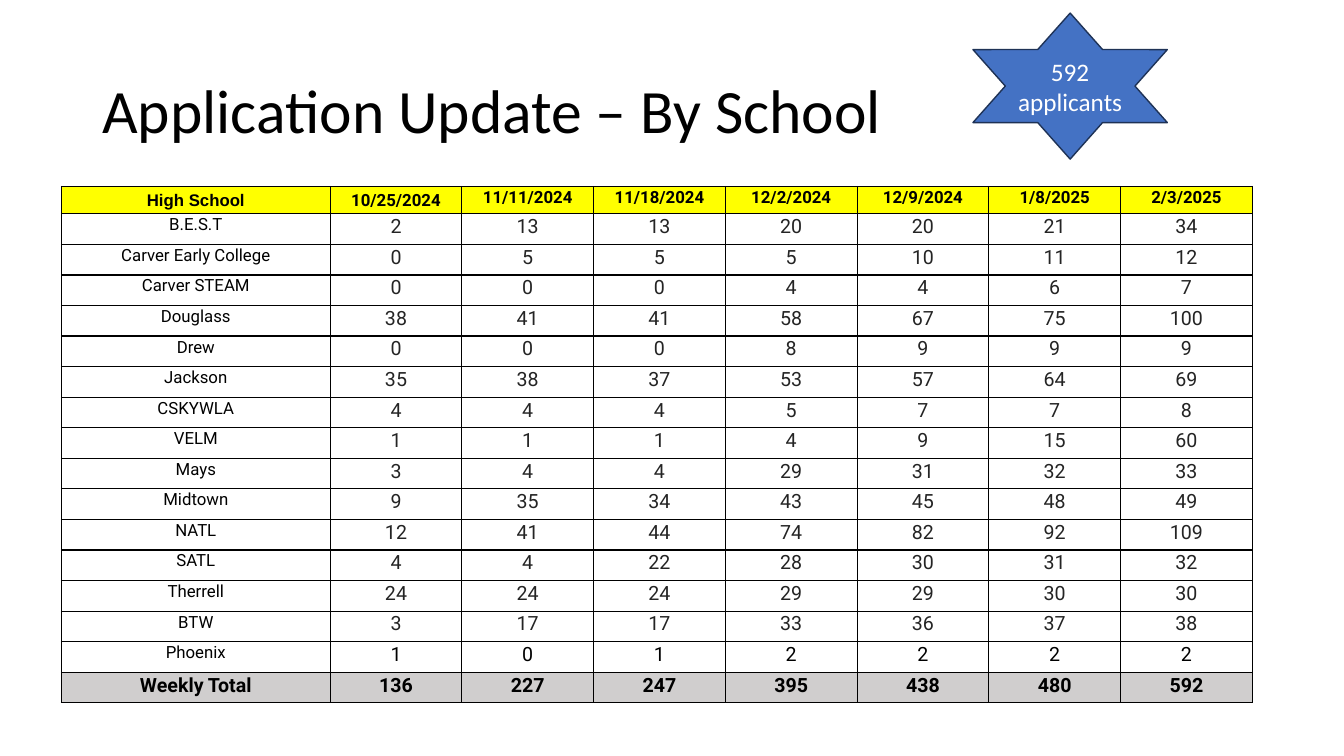
from dataclasses import dataclass
from typing import Any

from pptx import Presentation
from pptx.dml.color import RGBColor
from pptx.enum.shapes import MSO_SHAPE
from pptx.enum.text import MSO_ANCHOR, PP_ALIGN
from pptx.oxml import parse_xml
from pptx.oxml.ns import nsdecls
from pptx.util import Cm, Pt

BLACK = "000000"
CHARCOAL = "242424"
HEADER_YELLOW = "FFFF00"
TOTAL_GREY = "D0CECE"

DATES = ["10/25/2024", "11/11/2024", "11/18/2024", "12/2/2024",
         "12/9/2024", "1/8/2025", "2/3/2025"]
APPLICATIONS = {
    "B.E.S.T": [2, 13, 13, 20, 20, 21, 34],
    "Carver Early College": [0, 5, 5, 5, 10, 11, 12],
    "Carver STEAM": [0, 0, 0, 4, 4, 6, 7],
    "Douglass": [38, 41, 41, 58, 67, 75, 100],
    "Drew": [0, 0, 0, 8, 9, 9, 9],
    "Jackson": [35, 38, 37, 53, 57, 64, 69],
    "CSKYWLA": [4, 4, 4, 5, 7, 7, 8],
    "VELM": [1, 1, 1, 4, 9, 15, 60],
    "Mays": [3, 4, 4, 29, 31, 32, 33],
    "Midtown": [9, 35, 34, 43, 45, 48, 49],
    "NATL": [12, 41, 44, 74, 82, 92, 109],
    "SATL": [4, 4, 22, 28, 30, 31, 32],
    "Therrell": [24, 24, 24, 29, 29, 30, 30],
    "BTW": [3, 17, 17, 33, 36, 37, 38],
    "Phoenix": [1, 0, 1, 2, 2, 2, 2],
}

TABLE_LEFT, TABLE_TOP = 1.55, 4.7
SCHOOL_WIDTH, DATE_WIDTH = 6.77, 3.32
HEADER_HEIGHT, ROW_HEIGHT = 0.69, 0.77

CELL_PARA = {"alignment": PP_ALIGN.CENTER, "line_spacing": 1.07, "space_after": Pt(8)}


@dataclass
class TextStyle:
    size: float
    color: str = BLACK
    font: str = "Roboto"
    bold: bool = False


@dataclass
class TableRow:
    label: str
    values: list[Any]
    label_style: TextStyle
    value_style: TextStyle
    fill: str | None = None


def rgb(code: str) -> RGBColor:
    return RGBColor.from_string(code)


def set_all(target: Any, values: dict[str, Any]) -> None:
    for name, value in values.items():
        setattr(target, name, value)


def write(frame: Any, text: str, style: TextStyle, para_format: dict[str, Any]) -> None:
    para = frame.paragraphs[0]
    set_all(para, para_format)
    span = para.add_run()
    span.text = text
    set_all(span.font, {"size": Pt(style.size), "name": style.font, "bold": style.bold})
    span.font.color.rgb = rgb(style.color)


def add_borders(cell: Any) -> None:
    properties = cell._tc.get_or_add_tcPr()
    for side in ("lnL", "lnR", "lnT", "lnB"):
        properties.append(parse_xml(
            f'<a:{side} {nsdecls("a")} w="{Pt(1)}"><a:solidFill>'
            f'<a:srgbClr val="{BLACK}"/></a:solidFill></a:{side}>'))


def fill_cell(cell: Any, text: str, style: TextStyle, fill: str | None,
              side_margin: float, anchor: MSO_ANCHOR) -> None:
    set_all(cell, {"margin_left": Cm(side_margin), "margin_right": Cm(side_margin),
                   "margin_top": 0, "margin_bottom": 0, "vertical_anchor": anchor})
    add_borders(cell)
    if fill:
        cell.fill.solid()
        cell.fill.fore_color.rgb = rgb(fill)
    else:
        cell.fill.background()
    write(cell.text_frame, text, style, CELL_PARA)


def school_rows() -> list[TableRow]:
    school, count = TextStyle(12), TextStyle(14, CHARCOAL)
    heading, total = TextStyle(12, bold=True), TextStyle(14, bold=True)
    rows = [TableRow("High School", DATES, TextStyle(12, font="Arial", bold=True),
                     heading, HEADER_YELLOW)]
    for name, counts in APPLICATIONS.items():
        rows.append(TableRow(name, counts, school,
                             TextStyle(14) if name == "Phoenix" else count))
    totals = [sum(week) for week in zip(*APPLICATIONS.values())]
    rows.append(TableRow("Weekly Total", totals, total, total, TOTAL_GREY))
    return rows


def add_school_table(page: Any, rows: list[TableRow]) -> None:
    width = SCHOOL_WIDTH + DATE_WIDTH * len(DATES)
    height = HEADER_HEIGHT + ROW_HEIGHT * (len(rows) - 1)
    table = page.shapes.add_table(len(rows), len(DATES) + 1, Cm(TABLE_LEFT),
                                  Cm(TABLE_TOP), Cm(width), Cm(height)).table
    table.horz_banding = False
    for index, column in enumerate(table.columns):
        column.width = Cm(DATE_WIDTH if index else SCHOOL_WIDTH)
    for row_index, row in enumerate(rows):
        table.rows[row_index].height = Cm(ROW_HEIGHT if row_index else HEADER_HEIGHT)
        for column_index, value in enumerate([row.label, *row.values]):
            style = row.value_style if column_index else row.label_style
            leading = column_index < 2
            anchor = MSO_ANCHOR.MIDDLE if leading and row_index == 0 else MSO_ANCHOR.TOP
            fill_cell(table.cell(row_index, column_index), str(value), style,
                      row.fill, 0.18 if leading else 0, anchor)


def add_title(page: Any) -> None:
    box = page.shapes.add_textbox(Cm(2.33), Cm(1.01), Cm(29.21), Cm(3.68))
    set_all(box.text_frame, {"word_wrap": True, "vertical_anchor": MSO_ANCHOR.MIDDLE})
    write(box.text_frame, "Application Update – By School",
          TextStyle(44, font="Calibri"), {"line_spacing": 0.9})


def add_applicant_star(page: Any) -> None:
    star = page.shapes.add_shape(MSO_SHAPE.STAR_6_POINT,
                                 Cm(24.52), Cm(0.33), Cm(4.9), Cm(3.68))
    star.shadow.inherit = False
    star.fill.solid()
    star.fill.fore_color.rgb = rgb("4472C4")
    star.line.color.rgb = rgb("1E3256")
    star.line.width = Pt(1)
    set_all(star.text_frame, {"word_wrap": True, "vertical_anchor": MSO_ANCHOR.MIDDLE})
    write(star.text_frame, "592 applicants", TextStyle(18, "FFFFFF", "Calibri"),
          {"alignment": PP_ALIGN.CENTER})


def main() -> None:
    deck = Presentation()
    set_all(deck, {"slide_width": Cm(33.87), "slide_height": Cm(19.05)})
    page = deck.slides.add_slide(deck.slide_layouts[6])
    add_title(page)
    add_applicant_star(page)
    add_school_table(page, school_rows())
    deck.save("out.pptx")


if __name__ == "__main__":
    main()
